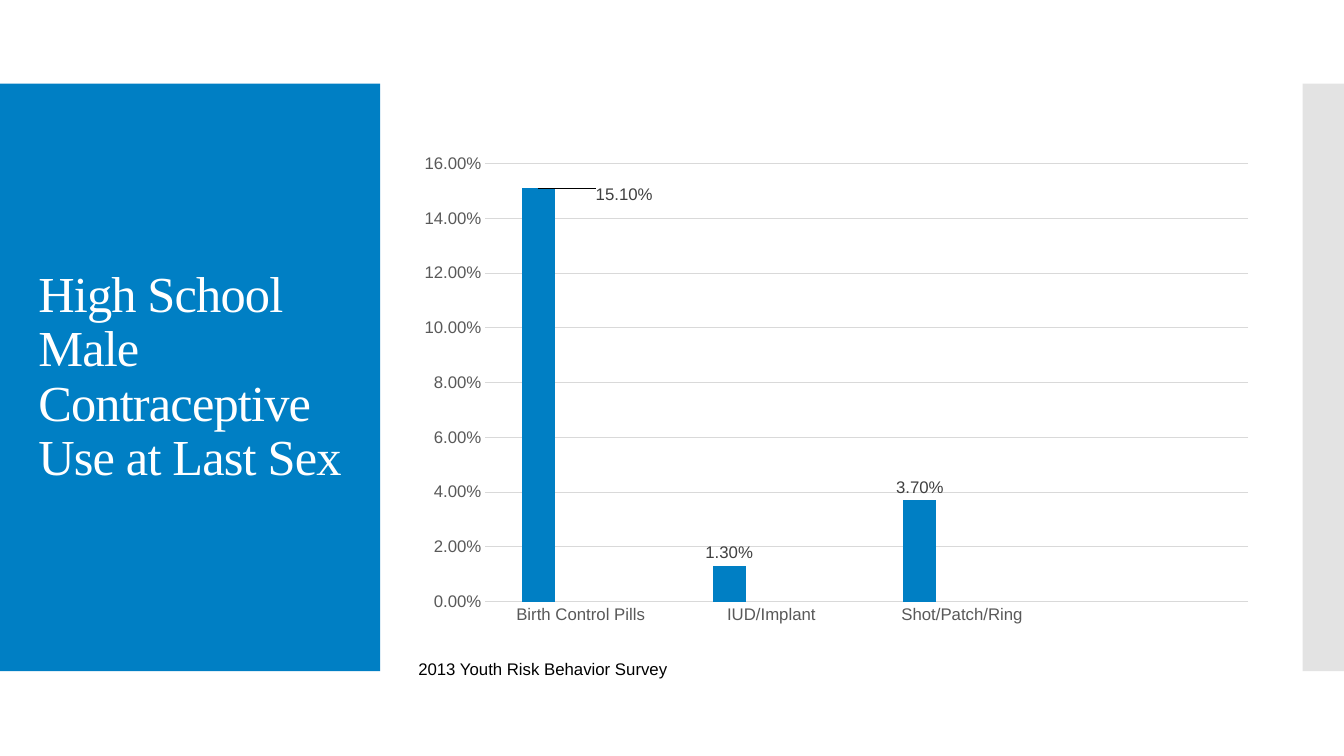
"""Build a slide charting contraceptive use reported by high school males."""
import pptx
import pptx.chart.data
import pptx.dml.color
import pptx.enum.chart
import pptx.enum.shapes
import pptx.enum.text
import pptx.oxml
import pptx.oxml.ns
import pptx.util
from pptx.util import Inches

BLUE = pptx.dml.color.RGBColor(0x00, 0x7F, 0xC4)
PINK = pptx.dml.color.RGBColor(0xFF, 0x6D, 0x88)
NAVY = pptx.dml.color.RGBColor(0x3C, 0x46, 0x76)
SILVER = pptx.dml.color.RGBColor(0xC8, 0xC8, 0xC8)
GRID_GRAY = pptx.dml.color.RGBColor(0xD9, 0xD9, 0xD9)
AXIS_GRAY = pptx.dml.color.RGBColor(0x59, 0x59, 0x59)
LABEL_GRAY = pptx.dml.color.RGBColor(0x40, 0x40, 0x40)
BLACK = pptx.dml.color.RGBColor(0x00, 0x00, 0x00)
WHITE = pptx.dml.color.RGBColor(0xFF, 0xFF, 0xFF)

PERCENT = "0.00%"
CATEGORIES = ["Birth Control Pills", "IUD/Implant", "Shot/Patch/Ring", ""]
SERIES = [
    ("Series 1", [0.151, 0.013, 0.037, None], BLUE),
    ("Series 2", [None] * 4, PINK),
    ("Series 3", [None] * 4, NAVY),
]


def set_font(font, size, color, name="Arial"):
    font.name = name
    font.size = pptx.util.Pt(size)
    font.color.rgb = color


def add_panel(slide, left, width, color, opacity=100):
    panel = slide.shapes.add_shape(
        pptx.enum.shapes.MSO_SHAPE.RECTANGLE,
        Inches(left), Inches(0.83), Inches(width), Inches(5.83))
    panel.shadow.inherit = False
    panel.fill.solid()
    panel.fill.fore_color.rgb = color
    panel.line.fill.background()
    if opacity < 100:
        fill_color = panel.element.spPr.find(".//" + pptx.oxml.ns.qn("a:srgbClr"))
        fill_color.append(pptx.oxml.parse_xml(
            f'<a:alpha {pptx.oxml.ns.nsdecls("a")} val="{opacity * 1000}"/>'))


def format_title(slide, text):
    title = slide.shapes.title
    title.left, title.top = Inches(0.28), Inches(1.23)
    title.width, title.height = Inches(3.22), Inches(5.03)
    title.element.getparent().append(title.element)
    frame = title.text_frame
    frame.word_wrap = True
    frame.auto_size = pptx.enum.text.MSO_AUTO_SIZE.NONE
    frame.vertical_anchor = pptx.enum.text.MSO_ANCHOR.MIDDLE
    paragraph = frame.paragraphs[0]
    paragraph.alignment = pptx.enum.text.PP_ALIGN.LEFT
    paragraph.line_spacing = 0.9
    run = paragraph.add_run()
    run.text = text
    set_font(run.font, 36, WHITE, "Times New Roman")
    run.font._element.set("spc", "-60")


def add_caption(slide, text):
    caption = slide.shapes.add_textbox(
        Inches(4.05), Inches(6.49), Inches(6.25), Inches(0.3))
    caption.text_frame.word_wrap = True
    run = caption.text_frame.paragraphs[0].add_run()
    run.text = text
    set_font(run.font, 12, BLACK)


def make_layout(**settings):
    children = "".join(
        f'<c:{name} val="{value}"/>' for name, value in settings.items())
    return pptx.oxml.parse_xml(
        f'<c:layout {pptx.oxml.ns.nsdecls("c")}>'
        f"<c:manualLayout>{children}</c:manualLayout></c:layout>")


def format_axis(axis):
    axis.major_tick_mark = pptx.enum.chart.XL_TICK_MARK.NONE
    axis.minor_tick_mark = pptx.enum.chart.XL_TICK_MARK.NONE
    set_font(axis.tick_labels.font, 12, AXIS_GRAY)


def format_line(line):
    line.color.rgb = GRID_GRAY
    line.width = pptx.util.Pt(0.75)


def format_value_labels(series):
    outside_end = pptx.enum.chart.XL_LABEL_POSITION.OUTSIDE_END
    labels = series.data_labels
    labels.show_value = True
    labels.number_format = PERCENT
    labels.number_format_is_linked = False
    labels.position = outside_end
    set_font(labels.font, 12, LABEL_GRAY)
    pills_label = series.points[0].data_label
    pills_label.position = outside_end
    set_font(pills_label.font, 12, LABEL_GRAY)
    label_element = labels._element.find(pptx.oxml.ns.qn("c:dLbl"))
    label_element.insert(1, make_layout(x=0.1, y=0.04))


def add_usage_chart(slide):
    chart_data = pptx.chart.data.CategoryChartData(number_format=PERCENT)
    chart_data.categories = CATEGORIES
    for name, values, _ in SERIES:
        chart_data.add_series(name, values)
    chart = slide.shapes.add_chart(
        pptx.enum.chart.XL_CHART_TYPE.COLUMN_CLUSTERED,
        Inches(4.05), Inches(1.43), Inches(8.5), Inches(4.83), chart_data).chart
    chart.has_legend = False
    chart.has_title = False
    set_font(chart.font, 10, BLACK)

    plot = chart.plots[0]
    plot.gap_width = 219
    plot.overlap = -27
    plot.vary_by_categories = False
    for series, (_, _, color) in zip(plot.series, SERIES):
        series.format.fill.solid()
        series.format.fill.fore_color.rgb = color
    format_value_labels(plot.series[0])

    format_axis(chart.category_axis)
    format_line(chart.category_axis.format.line)
    value_axis = chart.value_axis
    format_axis(value_axis)
    value_axis.minimum_scale = 0
    value_axis.maximum_scale = 0.16
    value_axis.major_unit = 0.02
    value_axis.tick_labels.number_format = PERCENT
    value_axis.tick_labels.number_format_is_linked = False
    value_axis.format.line.fill.background()
    format_line(value_axis.major_gridlines.format.line)

    plot_area = chart.element.find(".//" + pptx.oxml.ns.qn("c:plotArea"))
    for layout in plot_area.findall(pptx.oxml.ns.qn("c:layout")):
        plot_area.remove(layout)
    plot_area.insert(0, make_layout(
        layoutTarget="inner", xMode="edge", yMode="edge",
        x=0.09, y=0.04, w=0.89, h=0.9))


def main():
    presentation = pptx.Presentation()
    presentation.slide_width = Inches(13.33)
    presentation.slide_height = Inches(7.5)
    slide = presentation.slides.add_slide(presentation.slide_layouts[5])
    add_panel(slide, 0, 3.77, BLUE)
    add_panel(slide, 12.92, 0.41, SILVER, opacity=50)
    format_title(slide, "High School Male Contraceptive Use at Last Sex")
    add_caption(slide, "2013 Youth Risk Behavior Survey")
    add_usage_chart(slide)
    presentation.save("out.pptx")


if __name__ == "__main__":
    main()
